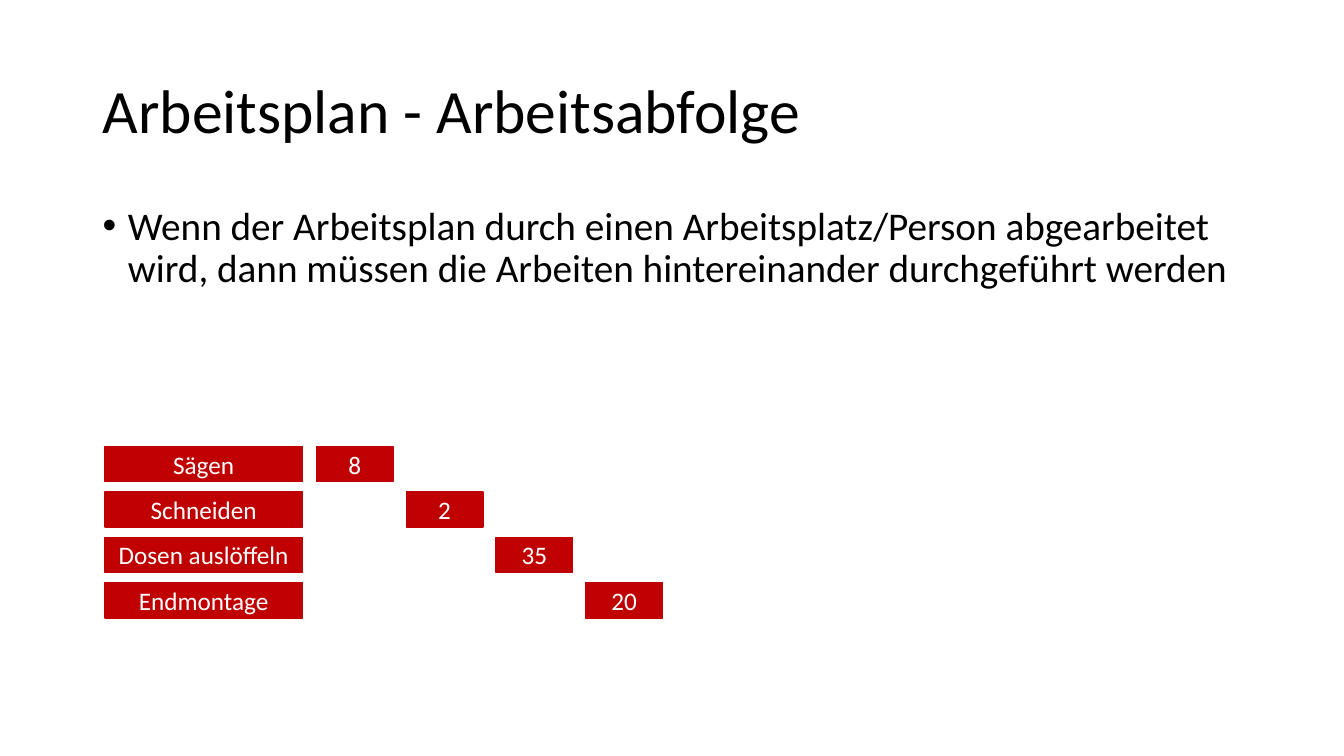
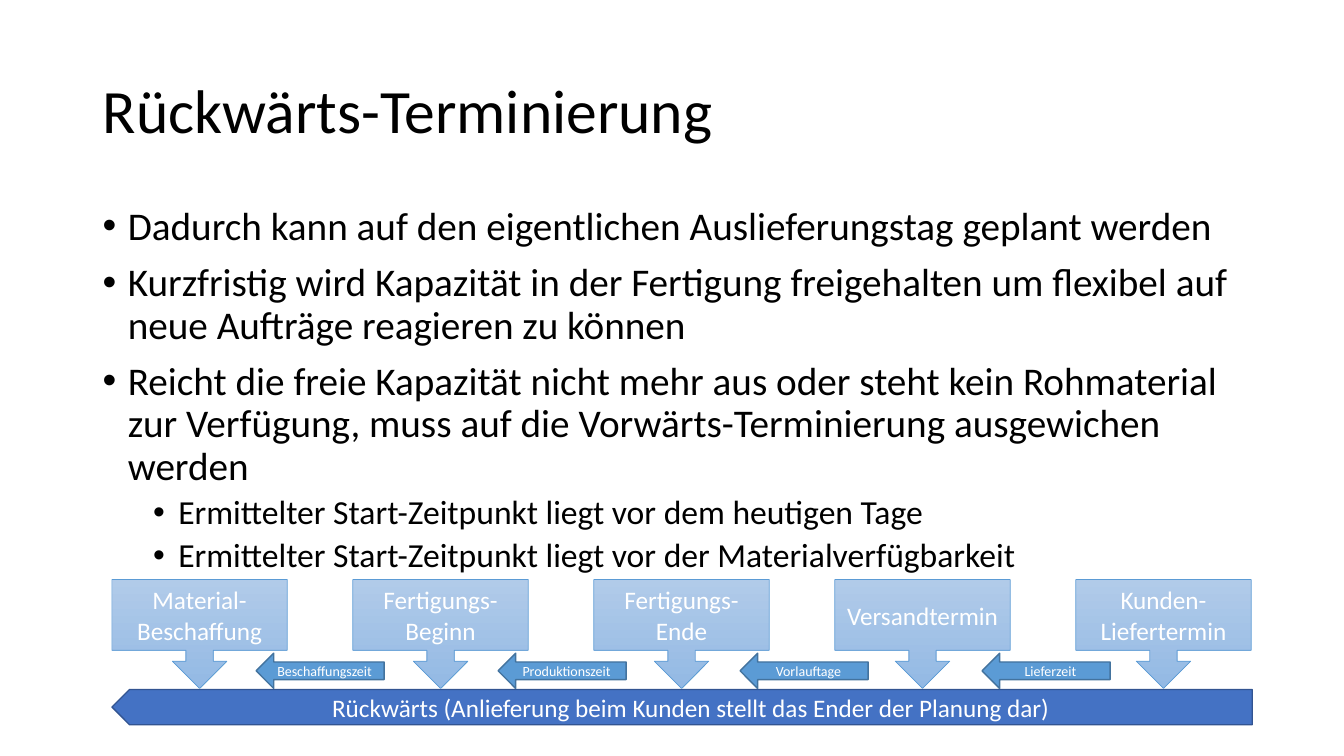
from dataclasses import dataclass

from lxml import etree
from pptx import Presentation
from pptx.dml.color import RGBColor
from pptx.enum.shapes import MSO_SHAPE
from pptx.enum.text import MSO_ANCHOR, PP_ALIGN
from pptx.oxml.ns import qn
from pptx.util import Inches, Pt

RECTANGLE = MSO_SHAPE.RECTANGLE
LEFT_ARROW = MSO_SHAPE.LEFT_ARROW
CALLOUT = MSO_SHAPE.DOWN_ARROW_CALLOUT
MIDDLE, TOP = MSO_ANCHOR.MIDDLE, MSO_ANCHOR.TOP
CENTER = PP_ALIGN.CENTER


@dataclass(frozen=True)
class Theme:
    font: str = "Calibri"
    text: str = "000000"
    on_fill: str = "FFFFFF"
    title_size: int = 44
    body_sizes: tuple = (28, 24)
    body_space: tuple = (10, 5)
    body_indent: tuple = (0.25, 0.75)
    hanging: float = 0.25
    line_spacing: float = 0.9
    label_size: int = 18
    small_size: int = 10


THEME = Theme()

# Shape styles: fill (two colours make a gradient), line colour, line width
TASK = {"fill": ["C00000"], "line": "C00000", "width": 1}
MILESTONE = {"fill": ["B1CBE9", "93B9E4"], "line": "5B9BD5", "width": 0.5}
PERIOD = {"fill": ["5B9BD5"], "line": "43739E", "width": 1}
DIRECTION = {"fill": ["4472C4"], "line": "325491", "width": 1}

SEQUENCE_TITLE = "Arbeitsplan - Arbeitsabfolge"
SEQUENCE_POINTS = [
    (0, "Wenn der Arbeitsplan durch einen Arbeitsplatz/Person abgearbeitet "
        "wird, dann müssen die Arbeiten hintereinander durchgeführt werden"),
]
TASKS = [("Sägen", 8), ("Schneiden", 2), ("Dosen auslöffeln", 35), ("Endmontage", 20)]

BACKWARD_TITLE = "Rückwärts-Terminierung"
BACKWARD_POINTS = [
    (0, "Dadurch kann auf den eigentlichen Auslieferungstag geplant werden"),
    (0, "Kurzfristig wird Kapazität in der Fertigung freigehalten um flexibel "
        "auf neue Aufträge reagieren zu können"),
    (0, "Reicht die freie Kapazität nicht mehr aus oder steht kein Rohmaterial "
        "zur Verfügung, muss auf die Vorwärts-Terminierung ausgewichen werden"),
    (1, "Ermittelter Start-Zeitpunkt liegt vor dem heutigen Tage"),
    (1, "Ermittelter Start-Zeitpunkt liegt vor der Materialverfügbarkeit"),
]
MILESTONES = ["Material- Beschaffung", "Fertigungs- Beginn", "Fertigungs- Ende",
              "Versandtermin", "Kunden-Liefertermin"]
PERIODS = ["Beschaffungszeit", "Produktionszeit", "Vorlauftage", "Lieferzeit"]
DIRECTION_TEXT = "Rückwärts (Anlieferung beim Kunden stellt das Ender der Planung dar)"


def style_font(font, size, color):
    for attribute, value in {"name": THEME.font, "size": Pt(size)}.items():
        setattr(font, attribute, value)
    font.color.rgb = RGBColor.from_string(color)


def add_text_frame(slide, top, height, anchor):
    box = slide.shapes.add_textbox(Inches(0.92), Inches(top), Inches(11.5), Inches(height))
    frame = box.text_frame
    frame.word_wrap = True
    frame.vertical_anchor = anchor
    return frame


def add_bullet(paragraph, level):
    properties = paragraph._p.get_or_add_pPr()
    properties.set("marL", str(Inches(THEME.body_indent[level])))
    properties.set("indent", str(-Inches(THEME.hanging)))
    etree.SubElement(properties, qn("a:buFont")).set("typeface", "Arial")
    etree.SubElement(properties, qn("a:buChar")).set("char", "•")


def add_content_slide(deck, title, points, body_height):
    slide = deck.slides.add_slide(deck.slide_layouts[6])
    heading = add_text_frame(slide, 0.4, 1.45, MIDDLE).paragraphs[0]
    heading.text = title
    heading.line_spacing = THEME.line_spacing
    style_font(heading.font, THEME.title_size, THEME.text)

    body = add_text_frame(slide, 2, body_height, TOP)
    for index, (level, text) in enumerate(points):
        paragraph = body.add_paragraph() if index else body.paragraphs[0]
        paragraph.text = text
        paragraph.level = level
        paragraph.line_spacing = THEME.line_spacing
        if index:
            paragraph.space_before = Pt(THEME.body_space[level])
        add_bullet(paragraph, level)
        style_font(paragraph.font, THEME.body_sizes[level], THEME.text)
    return slide


def add_label(slide, kind, place, text, style, size=THEME.label_size):
    shape = slide.shapes.add_shape(kind, *(Inches(length) for length in place))
    shape.shadow.inherit = False
    colors = [RGBColor.from_string(color) for color in style["fill"]]
    if len(colors) > 1:
        shape.fill.gradient()
        shape.fill.gradient_angle = 270
        for stop, color in zip(shape.fill.gradient_stops, colors):
            stop.color.rgb = color
            stop.position = float(color == colors[-1])
    else:
        shape.fill.solid()
        shape.fill.fore_color.rgb = colors[0]
    shape.line.color.rgb = RGBColor.from_string(style["line"])
    shape.line.width = Pt(style["width"])

    frame = shape.text_frame
    frame.word_wrap = True
    frame.vertical_anchor = MIDDLE
    paragraph = frame.paragraphs[0]
    paragraph.text = text
    paragraph.alignment = CENTER
    style_font(paragraph.font, size, THEME.on_fill)
    return shape


def build_sequence(deck):
    slide = add_content_slide(deck, SEQUENCE_TITLE, SEQUENCE_POINTS, 4.76)
    for step, (task, duration) in enumerate(TASKS):
        top = 4.43 + 0.45 * step
        add_label(slide, RECTANGLE, (1.04, top, 1.96, 0.35), task, TASK)
        add_label(slide, RECTANGLE, (3.14 + 0.89 * step, top, 0.76, 0.35),
                  str(duration), TASK)


def build_backward(deck):
    slide = add_content_slide(deck, BACKWARD_TITLE, BACKWARD_POINTS, 3.77)
    direction = add_label(slide, LEFT_ARROW, (1.11, 6.84, 11.31, 0.35),
                          DIRECTION_TEXT, DIRECTION)
    direction.adjustments[0] = 1
    for step, milestone in enumerate(MILESTONES):
        add_label(slide, CALLOUT, (1.11 + 2.39 * step, 5.75, 1.74, 1.08),
                  milestone, MILESTONE)
    for step, period in enumerate(PERIODS):
        add_label(slide, LEFT_ARROW, (2.54 + 2.4 * step, 6.48, 1.27, 0.35),
                  period, PERIOD, THEME.small_size)


def main():
    deck = Presentation()
    deck.slide_width, deck.slide_height = Inches(13.33), Inches(7.5)
    build_sequence(deck)
    build_backward(deck)
    deck.save("out.pptx")


if __name__ == "__main__":
    main()
